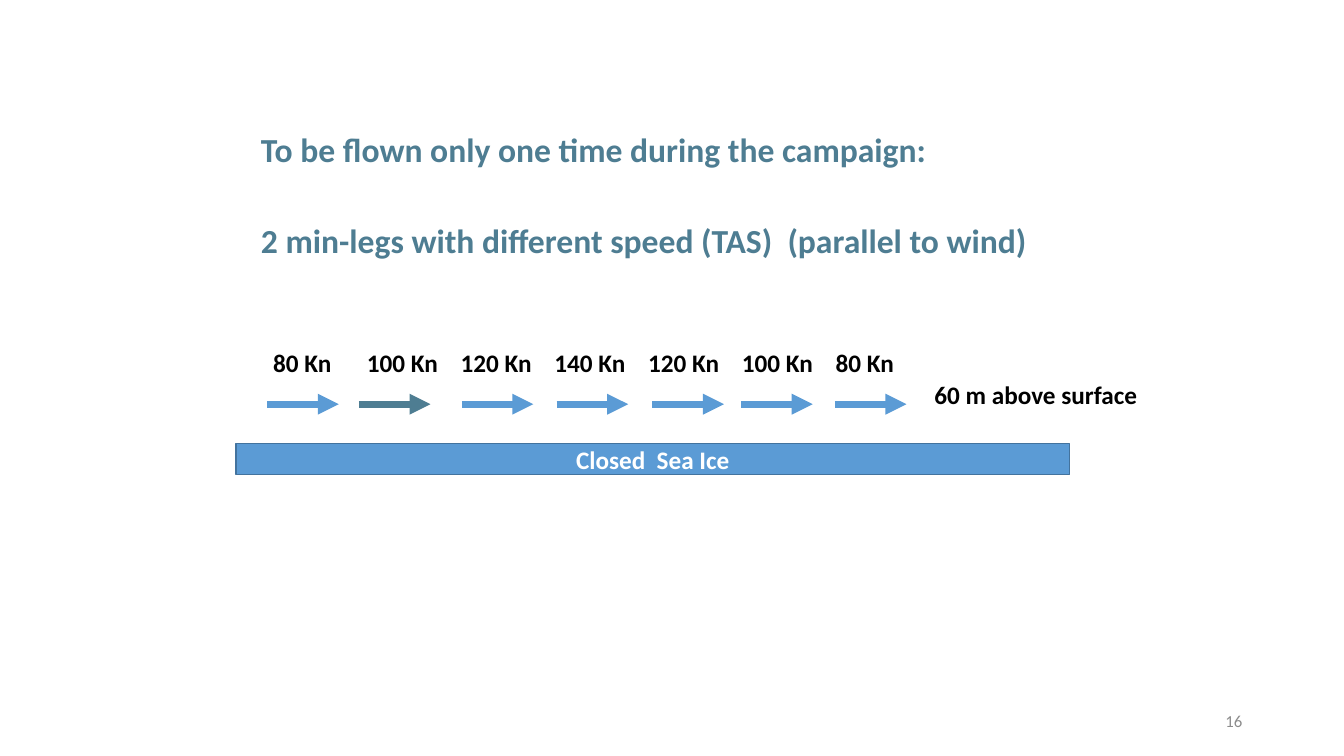
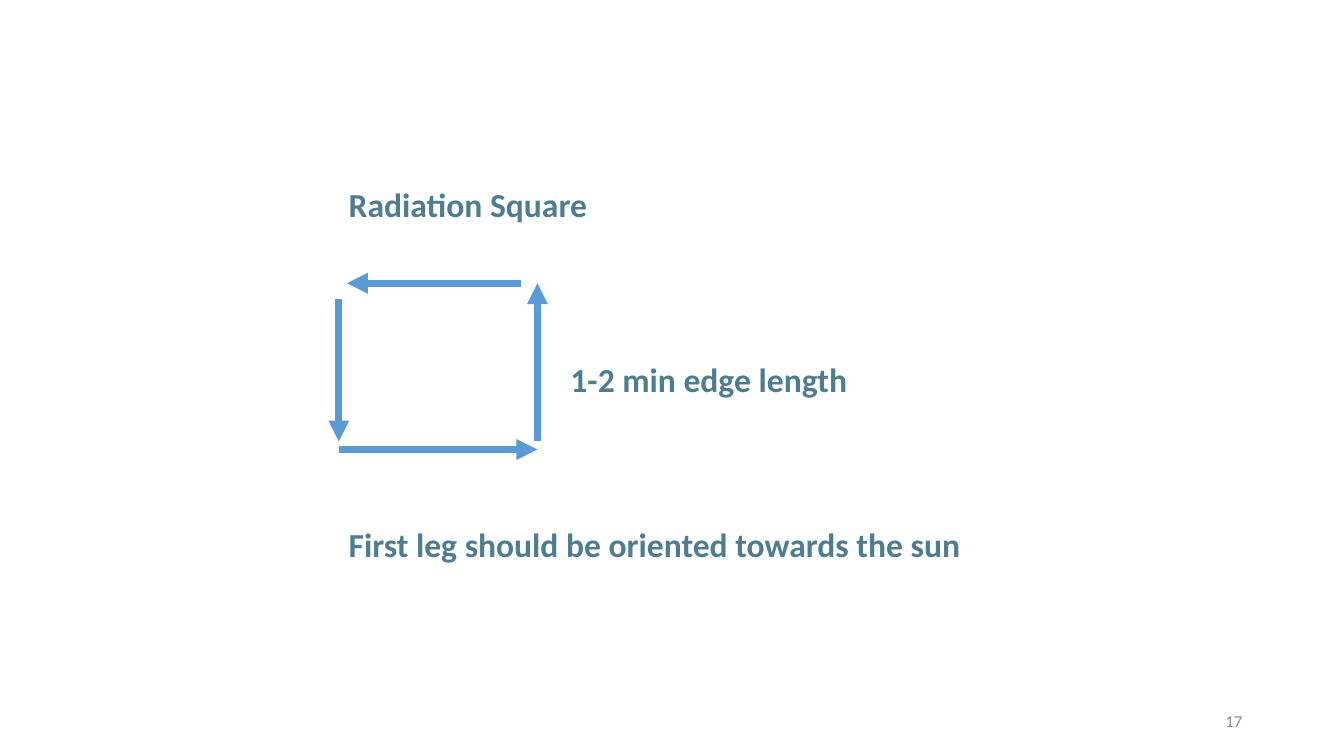
from lxml import etree
from pptx import Presentation
from pptx.dml.color import RGBColor
from pptx.enum import shapes, text
from pptx.oxml.ns import qn
from pptx.util import Pt

PX = 9144  # 100 px to the inch
PAGE_WIDTH, PAGE_HEIGHT = 1333, 750

TEAL = RGBColor(0x4E, 0x7D, 0x92)
BLUE = RGBColor(0x5B, 0x9B, 0xD5)
DARK_BLUE = RGBColor(0x43, 0x73, 0x9E)
GREY = RGBColor(0x8C, 0x8C, 0x8C)
BLACK = RGBColor(0, 0, 0)
WHITE = RGBColor(0xFF, 0xFF, 0xFF)

HEADING = dict(size=Pt(24), bold=True, color=TEAL)
LABEL = dict(size=Pt(18), bold=True, color=BLACK)
ICE = dict(size=Pt(18), bold=True, color=WHITE)
NUMBER = dict(size=Pt(12), bold=False, color=GREY)


def emu(*lengths):
    return [length * PX for length in lengths]


def write(shape, wording, style, align=text.PP_ALIGN.LEFT,
          anchor=text.MSO_ANCHOR.TOP, wrap=False):
    frame = shape.text_frame
    frame.word_wrap = wrap
    frame.vertical_anchor = anchor
    para = frame.paragraphs[0]
    para.alignment = align
    span = para.add_run()
    span.text = wording
    span.font.name = "Calibri"
    for name, value in style.items():
        if name == "color":
            span.font.color.rgb = value
        else:
            setattr(span.font, name, value)


def add_text(page, box, wording, style, **layout):
    write(page.shapes.add_textbox(*emu(*box)), wording, style, **layout)


def add_arrow(page, start, end, color=BLUE):
    arrow = page.shapes.add_connector(
        shapes.MSO_CONNECTOR.STRAIGHT, *emu(*start, *end))
    arrow.line.color.rgb = color
    arrow.line.width = Pt(5)
    etree.SubElement(arrow.line._get_or_add_ln(), qn("a:tailEnd"), type="triangle")
    etree.SubElement(arrow._element.spPr, qn("a:effectLst"))


def add_page(deck, number):
    page = deck.slides.add_slide(deck.slide_layouts[6])
    add_text(page, (942, 695, 300, 40), str(number), NUMBER, wrap=True,
             align=text.PP_ALIGN.RIGHT, anchor=text.MSO_ANCHOR.MIDDLE)
    return page


def add_speed_legs(page, box):
    left, top, width, height = box
    ice_height, pitch, arrow_length = 31, 93, 71

    # Speed labels at an even pitch, each with its arrow below
    speeds = (80, 100, 120, 140, 120, 100, 80)
    arrow_starts = (31, 122, 224, 318, 413, 501, 594)
    for index, (speed, offset) in enumerate(zip(speeds, arrow_starts)):
        label_width = 91 if speed >= 100 else 79
        add_text(page, (left + 27 + index * pitch, top, label_width, 40),
                 f"{speed} Kn", LABEL)
        start, level = left + offset, top + 61
        add_arrow(page, (start, level), (start + arrow_length, level),
                  TEAL if index == 1 else BLUE)
    add_text(page, (left + 683, top + 31, 223, 40), "60 m above surface", LABEL)

    # Ice band along the bottom
    ice = page.shapes.add_shape(
        shapes.MSO_SHAPE.RECTANGLE,
        *emu(left, top + height - ice_height, width, ice_height))
    ice.shadow.inherit = False
    ice.fill.solid()
    ice.fill.fore_color.rgb = BLUE
    ice.line.color.rgb = DARK_BLUE
    ice.line.width = Pt(1)
    write(ice, "Closed  Sea Ice", ICE, align=text.PP_ALIGN.CENTER,
          anchor=text.MSO_ANCHOR.MIDDLE, wrap=True)


def add_radiation_square(page, box):
    left, top, width, height = box
    right, bottom = left + width, top + height
    gap = 8
    legs = (
        ((left, bottom), (right, bottom)),
        ((right, bottom - gap), (right, top)),
        ((right - 2 * gap, top), (left + gap, top)),
        ((left, top + 2 * gap), (left, bottom - gap)),
    )
    for start, end in legs:
        add_arrow(page, start, end)

    # Title above, edge note beside, instruction below
    add_text(page, (left, top - 103, 268, 50), "Radiation Square", HEADING)
    add_text(page, (right + 23, top + 70, 297, 50), "1-2 min edge length", HEADING)
    add_text(page, (left, bottom + 69, 633, 50),
             "First leg should be oriented towards the sun", HEADING)


def main():
    deck = Presentation()
    deck.slide_width, deck.slide_height = emu(PAGE_WIDTH, PAGE_HEIGHT)

    # Legs flown at different speeds
    page = add_page(deck, 16)
    add_text(page, (249, 123, 686, 50),
             "To be flown only one time during the campaign:", HEADING)
    add_text(page, (249, 213, 788, 50),
             "2 min-legs with different speed (TAS)  (parallel to wind)", HEADING)
    add_speed_legs(page, (234, 340, 827, 131))

    # Square pattern
    page = add_page(deck, 17)
    add_radiation_square(page, (336, 281, 197, 165))

    deck.save("out.pptx")


if __name__ == "__main__":
    main()
